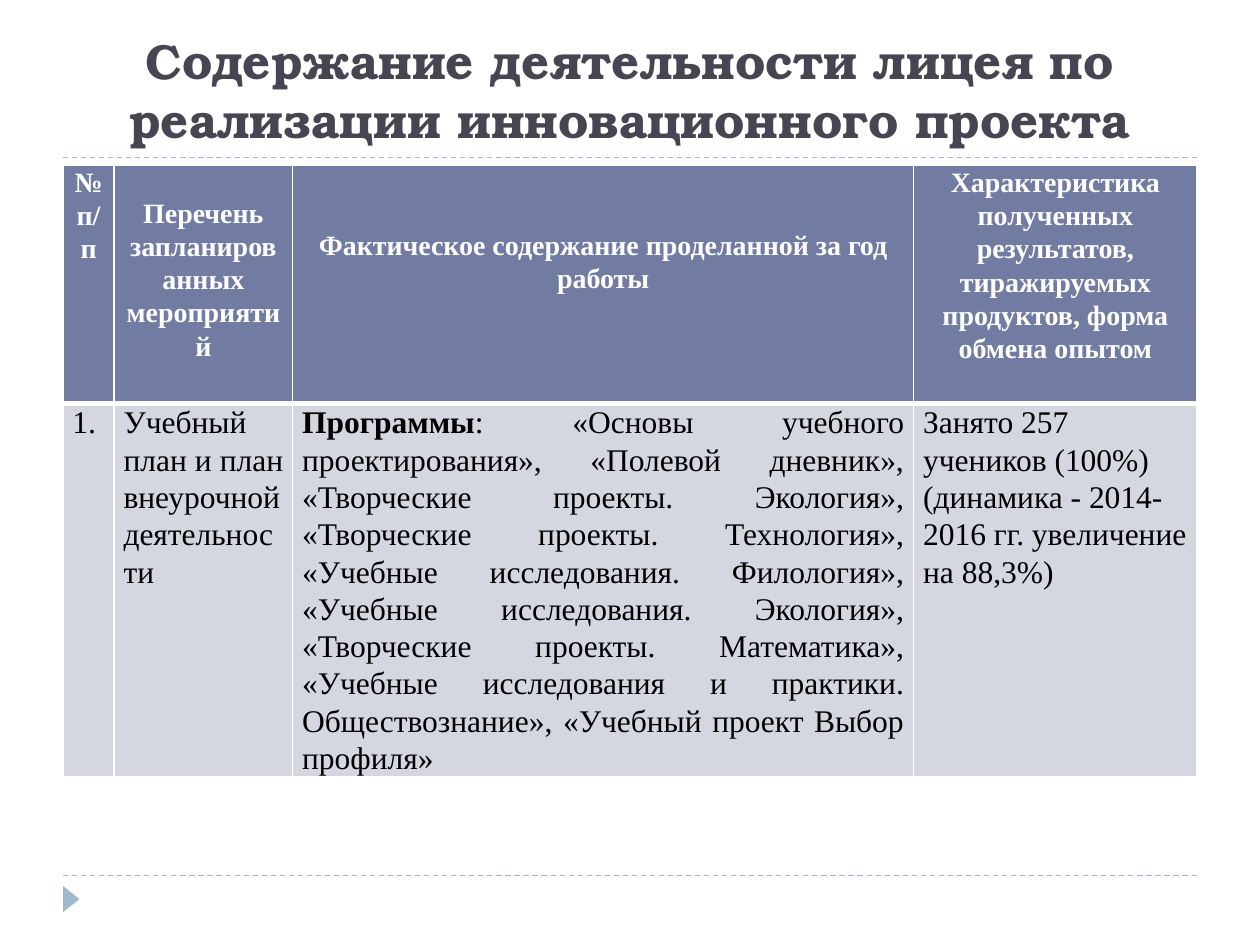
from lxml import etree
from pptx import Presentation
from pptx.dml.color import RGBColor
from pptx.enum.dml import MSO_LINE_DASH_STYLE as Dash
from pptx.enum.shapes import MSO_CONNECTOR as Connector, MSO_SHAPE as Shape
from pptx.enum.text import MSO_ANCHOR as Anchor, MSO_AUTO_SIZE as AutoSize, PP_ALIGN as Align
from pptx.oxml.ns import qn
from pptx.util import Cm, Pt

LEFT, WIDTH = 1.27, 22.86
TITLE_ONLY = 5

TITLE = "Содержание деятельности лицея по реализации инновационного проекта"
COLUMN_WIDTHS = [1.03, 3.6, 12.52, 5.71]
ROW_HEIGHTS = [4.8, 7.5]

# Header cells: top margin and paragraphs
HEADER = [
    (0, ["№", "п/п"]),
    (0.62, ["Перечень", "запланированных мероприятий"]),
    (1.27, ["Фактическое содержание проделанной за год работы"]),
    (0, ["Характеристика полученных результатов, тиражируемых продуктов, "
         "форма обмена опытом"]),
]
# Body cells: alignment, bold lead-in and paragraphs
BODY = [
    (Align.LEFT, "", ["1."]),
    (Align.JUSTIFY, "", ["Учебный план и план внеурочной деятельности"]),
    (Align.JUSTIFY, "Программы", [
        ": «Основы учебного проектирования», «Полевой дневник», "
        "«Творческие проекты. Экология», «Творческие проекты. Технология», "
        "«Учебные исследования. Филология», «Учебные исследования. Экология», "
        "«Творческие проекты. Математика», «Учебные исследования и практики. "
        "Обществознание», «Учебный проект Выбор профиля»"]),
    (Align.LEFT, "", ["Занято 257 учеников (100%)",
                      "(динамика - 2014-2016 гг. увеличение на 88,3%)"]),
]


def color(value):
    return RGBColor.from_string(value)


class SlideBuilder:
    accent, white = "9FB8CD", "FFFFFF"
    header_fill, body_fill = "727CA3", "D5D7E0"
    title_font = {"name": "TeX Gyre Bonum", "size": Pt(28), "bold": True}
    header_font = {"name": "Times New Roman", "size": Pt(16), "bold": True}
    body_font = {"name": "Times New Roman", "size": Pt(18), "bold": False}

    def __init__(self, presentation):
        self.slide = presentation.slides.add_slide(presentation.slide_layouts[TITLE_ONLY])

    def format_run(self, run, font, font_color):
        for name, value in font.items():
            setattr(run.font, name, value)
        run.font.color.rgb = color(font_color)

    def title(self, text, top, height):
        shape = self.slide.shapes.title
        box = {"left": LEFT, "top": top, "width": WIDTH, "height": height}
        for name, value in box.items():
            setattr(shape, name, Cm(value))
        frame = shape.text_frame
        frame.auto_size, frame.vertical_anchor = AutoSize.NONE, Anchor.BOTTOM
        paragraph = frame.paragraphs[0]
        paragraph.alignment = Align.CENTER
        run = paragraph.add_run()
        run.text = text
        self.format_run(run, self.title_font, "464653")

    def dashed_line(self, top):
        line = self.slide.shapes.add_connector(
            Connector.STRAIGHT, Cm(LEFT), Cm(top), Cm(LEFT + WIDTH), Cm(top))
        line.line.color.rgb = color(self.accent)
        line.line.width = Pt(0.75)
        line.line.dash_style = Dash.DASH
        etree.SubElement(line._element.spPr, qn("a:effectLst"))

    def marker(self, left, top, width, height):
        shape = self.slide.shapes.add_shape(
            Shape.ISOSCELES_TRIANGLE, Cm(left), Cm(top), Cm(width), Cm(height))
        shape.rotation = 90
        shape.shadow.inherit = False
        shape.fill.solid()
        shape.fill.fore_color.rgb = color(self.accent)
        shape.line.fill.background()

    def borders(self, cell, widths):
        properties = cell._tc.get_or_add_tcPr()
        for side, width in widths.items():
            line = etree.SubElement(properties, qn(f"a:ln{side}"), w=str(Pt(width)))
            fill = etree.SubElement(line, qn("a:solidFill"))
            etree.SubElement(fill, qn("a:srgbClr"), val=self.white)

    def cell(self, cell, texts, font, font_color, fill, align, lead="", top=0, edges=None):
        self.borders(cell, {"L": 1, "R": 1, "T": 1, "B": 1} | (edges or {}))
        cell.fill.solid()
        cell.fill.fore_color.rgb = color(fill)
        margins = {"left": 0.19, "right": 0.19, "top": top, "bottom": 0}
        for side, value in margins.items():
            setattr(cell, f"margin_{side}", Cm(value))
        frame = cell.text_frame
        for index, text in enumerate(texts):
            paragraph = frame.add_paragraph() if index else frame.paragraphs[0]
            paragraph.alignment = align
            paragraph.line_spacing = 1.07
            if lead and index == 0:
                run = paragraph.add_run()
                run.text = lead
                self.format_run(run, font | {"bold": True}, font_color)
            run = paragraph.add_run()
            run.text = text
            self.format_run(run, font, font_color)

    def table(self, top):
        table = self.slide.shapes.add_table(
            len(ROW_HEIGHTS), len(COLUMN_WIDTHS), Cm(LEFT), Cm(top),
            Cm(WIDTH), Cm(sum(ROW_HEIGHTS))).table
        for column, width in zip(table.columns, COLUMN_WIDTHS):
            column.width = Cm(width)
        for row, height in zip(table.rows, ROW_HEIGHTS):
            row.height = Cm(height)
        for index, (margin, texts) in enumerate(HEADER):
            self.cell(table.cell(0, index), texts, self.header_font, self.white,
                      self.header_fill, Align.CENTER, top=margin, edges={"B": 3})
        for index, (align, lead, texts) in enumerate(BODY):
            self.cell(table.cell(1, index), texts, self.body_font, "000000",
                      self.body_fill, align, lead=lead, edges={"T": 3})


def main():
    presentation = Presentation()
    presentation.slide_width, presentation.slide_height = Cm(25.4), Cm(19.05)
    builder = SlideBuilder(presentation)

    # Frame lines and corner marker
    for top in (17.65, 3.18):
        builder.dashed_line(top)
    builder.marker(1.17, 17.96, 0.53, 0.33)

    # Title and table
    builder.title(TITLE, 0.43, 2.69)
    builder.table(3.33)

    presentation.save("out.pptx")


if __name__ == "__main__":
    main()
